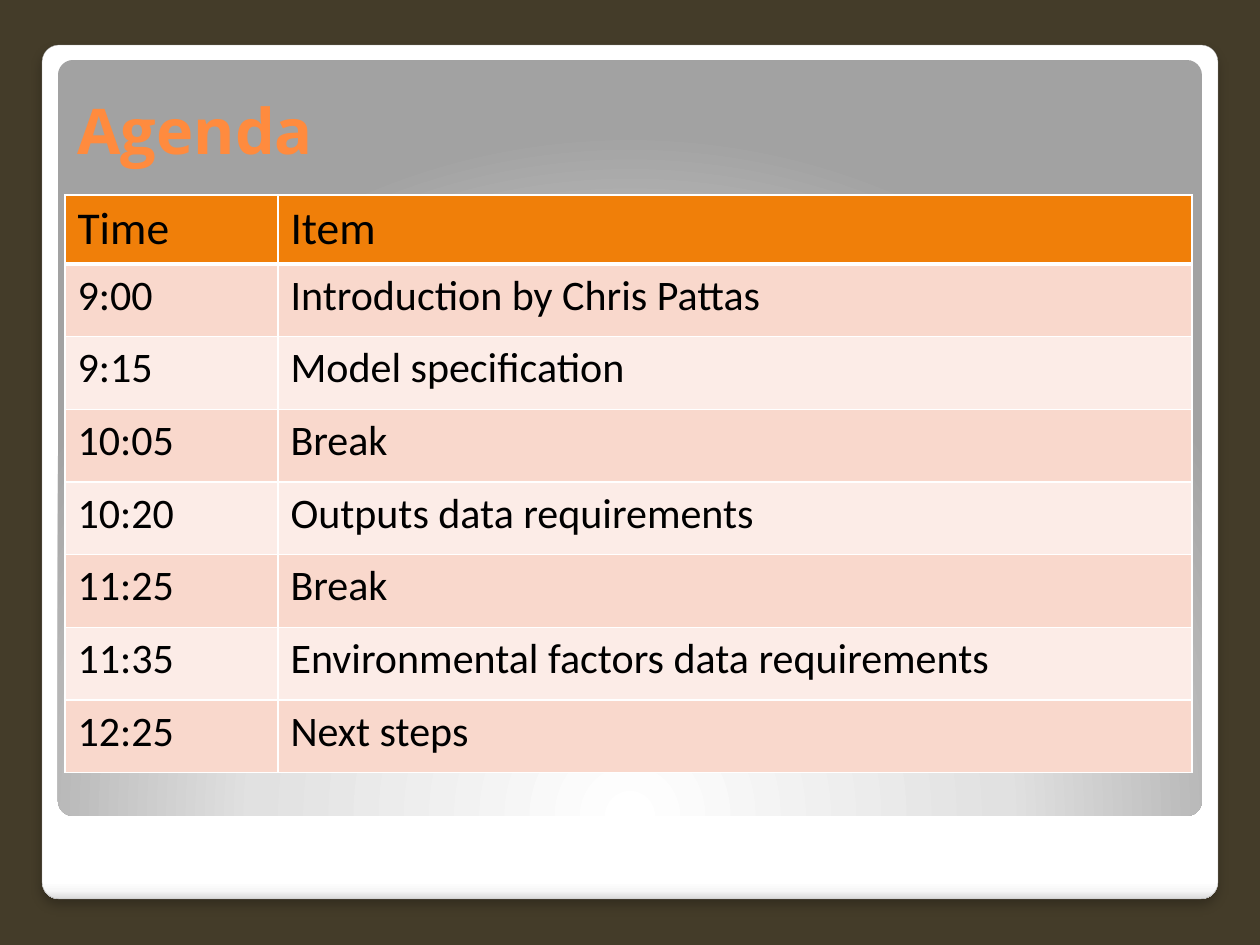
from lxml import etree
from pptx import Presentation
from pptx.dml.color import RGBColor
from pptx.enum.shapes import MSO_SHAPE
from pptx.enum.text import MSO_ANCHOR, PP_ALIGN
from pptx.oxml import parse_xml
from pptx.oxml.ns import qn
from pptx.util import Pt

ROUNDED = MSO_SHAPE.ROUNDED_RECTANGLE
MIDDLE = MSO_ANCHOR.MIDDLE
TOP = MSO_ANCHOR.TOP
LEFT = PP_ALIGN.LEFT

EMU_PER_PX = 914400 / 126
NAMESPACE = "http://schemas.openxmlformats.org/drawingml/2006/main"

BACKGROUND = RGBColor(0x44, 0x3C, 0x29)
TITLE_ORANGE = RGBColor(0xFF, 0x8B, 0x3E)
HEADER_ORANGE = RGBColor(0xF0, 0x7F, 0x09)
BANDS = RGBColor(0xF9, 0xD8, 0xCC), RGBColor(0xFC, 0xEC, 0xE7)
WHITE = RGBColor(0xFF, 0xFF, 0xFF)
BLACK = RGBColor(0x00, 0x00, 0x00)
PALE = RGBColor(0xF7, 0xF7, 0xF7)
SILVER = RGBColor(0xDA, 0xDA, 0xDA)
LIGHT_GREY = RGBColor(0xE1, 0xE1, 0xE1)
PANEL_GREY = RGBColor(0xA2, 0xA2, 0xA2)
OUTLINE_GREY = RGBColor(0xA4, 0xA4, 0xA4)

CARD_STOPS = [(0, WHITE), (98, WHITE), (99, PALE), (100, SILVER)]
PANEL_STOPS = [(0, WHITE), (55, LIGHT_GREY), (100, PANEL_GREY)]
LINEAR_DOWN = '<a:lin ang="5400000" scaled="0"/>'
CIRCLE_FROM_BELOW = ('<a:path path="circle"><a:fillToRect l="50000" t="175000" '
                     'r="50000" b="-75000"/></a:path>')

AGENDA = [
    ("Time", "Item"),
    ("9:00", "Introduction by Chris Pattas"),
    ("9:15", "Model specification"),
    ("10:05", "Break"),
    ("10:20", "Outputs data requirements"),
    ("11:25", "Break"),
    ("11:35", "Environmental factors data requirements"),
    ("12:25", "Next steps"),
]


def px(length):
    return round(length * EMU_PER_PX)


def write_text(frame, text, *, size, color, font="Calibri", bold=False, anchor=TOP):
    frame.word_wrap = True
    frame.vertical_anchor = anchor
    paragraph = frame.paragraphs[0]
    paragraph.alignment = LEFT
    run = paragraph.add_run()
    run.text = text
    run.font.name = font
    run.font.size = Pt(size)
    run.font.bold = bold
    run.font.color.rgb = color


def add_gradient_card(slide, box, stops, direction):
    shape = slide.shapes.add_shape(ROUNDED, *map(px, box))
    shape.adjustments[0] = 0.02
    shape.shadow.inherit = False
    shape.line.fill.background()
    stop_xml = "".join(
        f'<a:gs pos="{position * 1000}"><a:srgbClr val="{color}"/></a:gs>'
        for position, color in stops)
    gradient = parse_xml(f'<a:gradFill xmlns:a="{NAMESPACE}" rotWithShape="1">'
                         f'<a:gsLst>{stop_xml}</a:gsLst>{direction}</a:gradFill>')
    shape.element.spPr.find(qn("a:prstGeom")).addnext(gradient)
    return shape


def add_backdrop(slide, box):
    left, top, width, height = box
    # White card with a soft shadow
    card = add_gradient_card(slide, box, CARD_STOPS, LINEAR_DOWN)
    card.line.color.rgb = OUTLINE_GREY
    card.line.width = Pt(0.16)
    card.element.spPr.find(qn("a:effectLst")).append(parse_xml(
        f'<a:outerShdw xmlns:a="{NAMESPACE}" blurRad="{Pt(6)}" dist="{Pt(4)}" '
        'dir="5400000" rotWithShape="0"><a:srgbClr val="000000">'
        '<a:alpha val="25000"/></a:srgbClr></a:outerShdw>'))
    # Grey panel inside the card
    panel_box = left + 16, top + 15, width - 32, height - 98
    add_gradient_card(slide, panel_box, PANEL_STOPS, CIRCLE_FROM_BELOW)


def place_title(slide, box, text):
    title = slide.shapes.title
    title.left, title.top, title.width, title.height = map(px, box)
    write_text(title.text_frame, text, size=36, color=TITLE_ORANGE,
               font="Open Sans", bold=True, anchor=MIDDLE)
    # Bring the title in front of the backdrop
    title.element.getparent().append(title.element)


def set_borders(cell, bottom_width):
    properties = cell._tc.get_or_add_tcPr()
    widths = {"lnL": 1, "lnR": 1, "lnT": 1, "lnB": bottom_width}
    for index, (side, width) in enumerate(widths.items()):
        line = etree.Element(qn(f"a:{side}"), w=str(Pt(width)))
        fill = etree.SubElement(line, qn("a:solidFill"))
        etree.SubElement(fill, qn("a:srgbClr"), val=str(WHITE))
        properties.insert(index, line)


def add_agenda_table(slide, box, rows, time_width=213, header_height=69):
    left, top, width, height = box
    table = slide.shapes.add_table(len(rows), 2, *map(px, box)).table
    table.columns[0].width = px(time_width)
    table.columns[1].width = px(width - time_width)
    row_height = (height - header_height) / (len(rows) - 1)
    for row_index, values in enumerate(rows):
        is_header = row_index == 0
        table.rows[row_index].height = px(header_height if is_header else row_height)
        for column_index, value in enumerate(values):
            cell = table.cell(row_index, column_index)
            cell.fill.solid()
            cell.fill.fore_color.rgb = (
                HEADER_ORANGE if is_header else BANDS[(row_index - 1) % 2])
            set_borders(cell, bottom_width=3 if is_header else 1)
            write_text(cell.text_frame, value, size=26 if is_header else 24,
                       color=BLACK)


def main():
    presentation = Presentation()
    presentation.slide_width, presentation.slide_height = px(1260), px(945)
    slide = presentation.slides.add_slide(presentation.slide_layouts[5])
    slide.background.fill.solid()
    slide.background.fill.fore_color.rgb = BACKGROUND

    add_backdrop(slide, (42, 45, 1176, 854))
    place_title(slide, (65, 79, 1128, 100), "Agenda")
    add_agenda_table(slide, (65, 195, 1127, 578), AGENDA)

    presentation.save("out.pptx")


if __name__ == "__main__":
    main()
